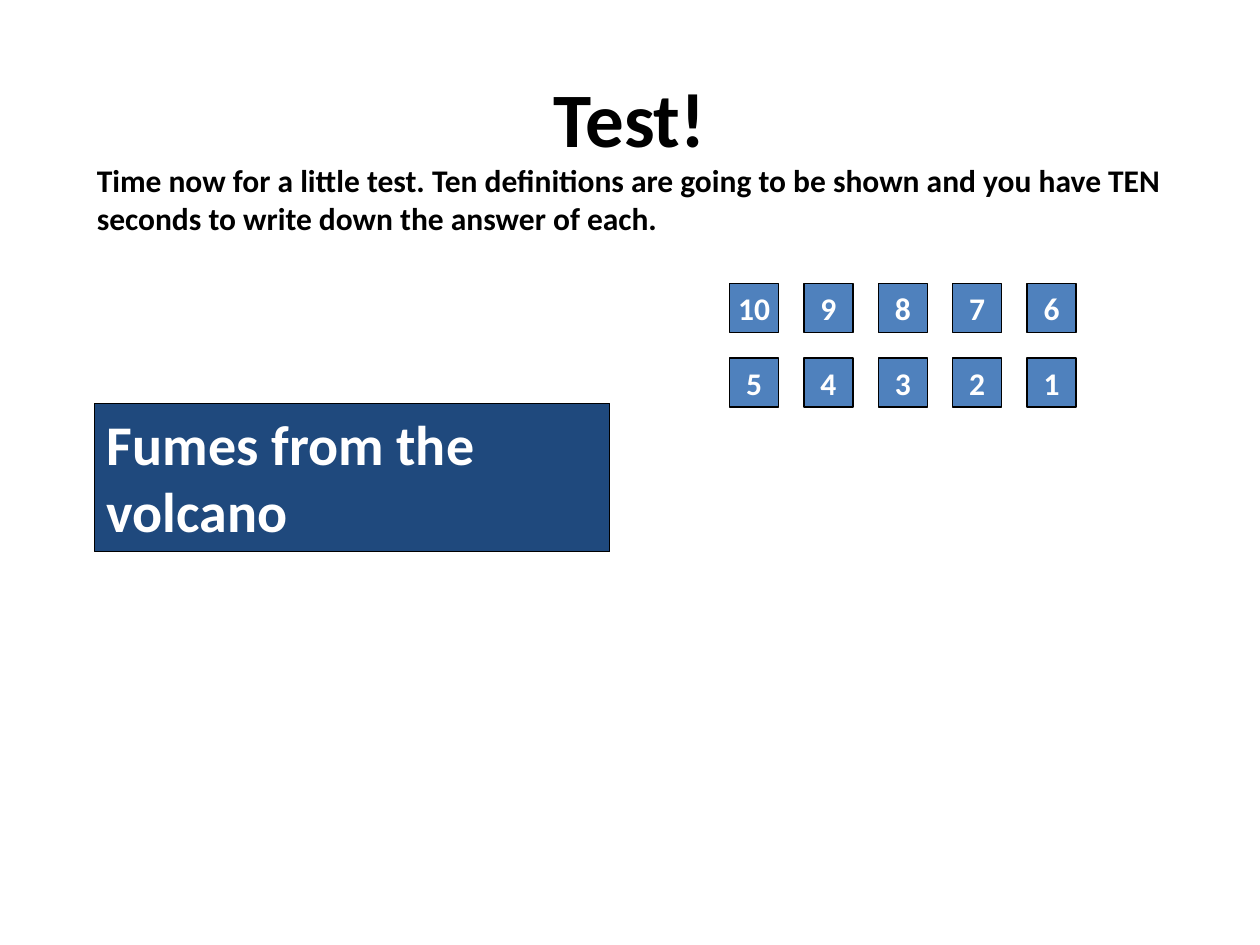
from pptx import Presentation
from pptx.dml.color import RGBColor
from pptx.enum.shapes import MSO_SHAPE
from pptx.enum.text import MSO_ANCHOR, PP_ALIGN
from pptx.util import Inches, Pt


def color(code):
    """Turn a hex string into a colour."""
    return RGBColor.from_string(code)


def write(shape, text, size, code, align=PP_ALIGN.LEFT, anchor=MSO_ANCHOR.TOP, wrap=True):
    """Put one bold paragraph into a shape."""
    frame = shape.text_frame
    frame.word_wrap = wrap
    frame.vertical_anchor = anchor
    para = frame.paragraphs[0]
    para.text = text
    para.alignment = align
    font = para.font
    font.name = "Calibri"
    font.size = Pt(size)
    font.bold = True
    font.color.rgb = color(code)


def add_label(slide, box, text, size, **style):
    """Add black text in a box."""
    label = slide.shapes.add_textbox(*map(Inches, box))
    write(label, text, size, "000000", **style)


def add_panel(slide, box, fill, text, size, **style):
    """Add a filled, outlined rectangle with white text."""
    panel = slide.shapes.add_shape(MSO_SHAPE.RECTANGLE, *map(Inches, box))
    panel.shadow.inherit = False
    panel.fill.solid()
    panel.fill.fore_color.rgb = color(fill)
    panel.line.color.rgb = color("000000")
    panel.line.width = Pt(0.75)
    write(panel, text, size, "FFFFFF", **style)


def add_timer(slide, left, top, side=0.39, step=0.59, cols=5, start=10):
    """Add a grid of tiles that counts down to one."""
    for index in range(start):
        row, col = divmod(index, cols)
        box = (left + col * step, top + row * step, side, side)
        add_panel(slide, box, "4F81BD", str(start - index), 18,
                  align=PP_ALIGN.CENTER, anchor=MSO_ANCHOR.MIDDLE, wrap=False)


def main():
    """Build and save the test slide."""
    deck = Presentation()
    deck.slide_width = Inches(10)
    deck.slide_height = Inches(7.5)
    slide = deck.slides.add_slide(deck.slide_layouts[6])
    add_label(slide, (0.5, 0.3, 9, 1.25), "Test!", 44,
              align=PP_ALIGN.CENTER, anchor=MSO_ANCHOR.MIDDLE)
    add_label(slide, (0.67, 1.23, 8.76, 0.71),
              "Time now for a little test. Ten definitions are going to be shown "
              "and you have TEN seconds to write down the answer of each.", 18)
    add_timer(slide, 5.79, 2.25)
    add_panel(slide, (0.75, 3.2, 4.09, 1.18), "1F497D", "Fumes from the volcano", 32)
    deck.save("out.pptx")


if __name__ == "__main__":
    main()
